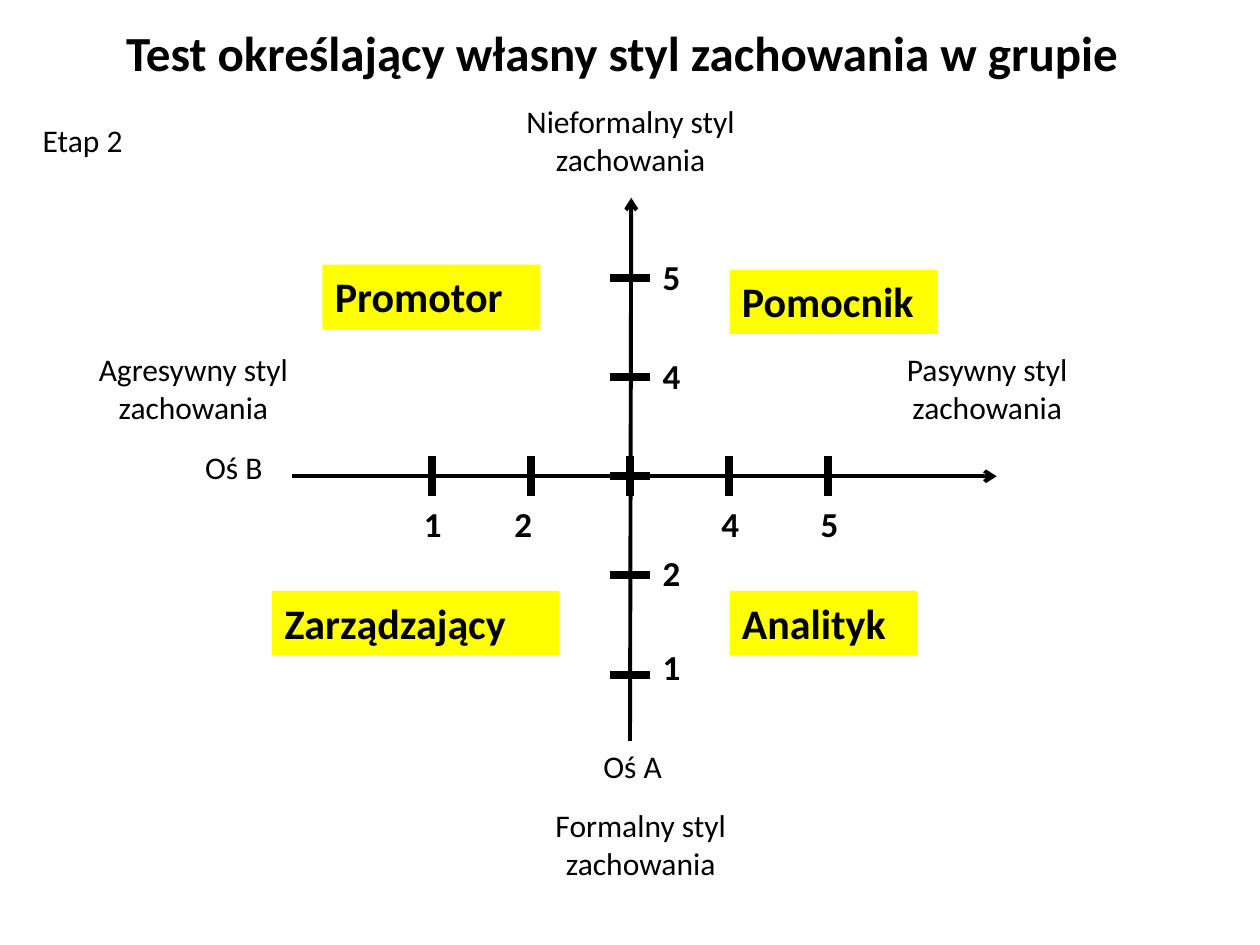
"""Build a slide with a two-axis chart of behaviour styles in a group."""
from lxml import etree
from pptx import Presentation
from pptx.dml.color import RGBColor
from pptx.enum.shapes import MSO_CONNECTOR, MSO_SHAPE
from pptx.enum.text import MSO_ANCHOR, MSO_AUTO_SIZE, PP_ALIGN
from pptx.oxml.ns import qn
from pptx.util import Inches, Pt

STRAIGHT, RECTANGLE = MSO_CONNECTOR.STRAIGHT, MSO_SHAPE.RECTANGLE
LEFT, CENTER = PP_ALIGN.LEFT, PP_ALIGN.CENTER
BLACK, YELLOW = "000000", "FFFF00"

TITLE = ("Test określający własny styl zachowania w grupie", (0.9, 0.13, 8.43, 0.57))
STYLE_SIZE = (2.05, 0.74)
STYLES = [
    ("Agresywny styl zachowania", (0.51, 2.73)),
    ("Pasywny styl zachowania", (6.81, 2.73)),
    ("Formalny styl zachowania", (4.06, 6.35)),
    ("Nieformalny styl zachowania", (3.98, 0.76)),
]
CAPTIONS = [
    ("Oś A", (4.69, 5.88, 0.94, 0.42)),
    ("Oś B", (1.53, 3.51, 0.95, 0.42)),
    ("Etap 2", (0.24, 0.91, 1.22, 0.42)),
]
ROLES = [
    ("Zarządzający", (2.16, 4.69, 2.28, 0.51)),
    ("Promotor", (2.56, 2.1, 1.73, 0.51)),
    ("Analityk", (5.79, 4.69, 1.49, 0.51)),
    ("Pomocnik", (5.79, 2.14, 1.65, 0.51)),
]
AXES = [((5, 5.88), (5.01, 1.57)), ((2.32, 3.78), (7.91, 3.78))]
ORIGIN_X, ORIGIN_Y = 5, 3.78
STEP, HALF_TICK, MIDDLE = 0.787, 0.16, 3
SCORE_SIZE = (0.39, 0.44)
SCORES_B = {1: -0.16, 2: -0.23, 4: -0.16, 5: -0.16}
SCORES_A = {1: -0.28, 2: -0.24, 4: -0.23, 5: -0.23}

CAPTION = {"size": Pt(18), "bold": False}
SCORE = {"size": Pt(20), "bold": True}
ROLE = {"size": Pt(24), "bold": True}
HEADING = {"size": Pt(28), "bold": True}
FRAME = {"word_wrap": True, "vertical_anchor": MSO_ANCHOR.TOP,
         "auto_size": MSO_AUTO_SIZE.SHAPE_TO_FIT_TEXT}


def color(value):
    return RGBColor.from_string(value)


def assign(target, values):
    for name, value in values.items():
        setattr(target, name, value)


def write(shape, wording, font_values, align=LEFT):
    frame = shape.text_frame
    frame.text = wording
    assign(frame, FRAME)
    paragraph = frame.paragraphs[0]
    paragraph.alignment = align
    font = paragraph.runs[0].font
    assign(font, {"name": "Calibri", **font_values})
    font.color.rgb = color(BLACK)


def add_label(slide, wording, box, font_values, align=LEFT):
    label = slide.shapes.add_textbox(*map(Inches, box))
    write(label, wording, font_values, align)


def add_role(slide, wording, box):
    role = slide.shapes.add_shape(RECTANGLE, *map(Inches, box))
    role.shadow.inherit = False
    role.fill.solid()
    role.fill.fore_color.rgb = color(YELLOW)
    role.line.fill.background()
    write(role, wording, ROLE)


def add_line(slide, start, end, width, arrow=False):
    line = slide.shapes.add_connector(STRAIGHT, *map(Inches, start + end))
    line.line.width = Pt(width)
    line.line.color.rgb = color(BLACK)
    properties = line._element.spPr
    if arrow:
        outline = properties.find(qn("a:ln"))
        etree.SubElement(outline, qn("a:tailEnd"), type="arrow")
    etree.SubElement(properties, qn("a:effectLst"))


def tick_x(score):
    return ORIGIN_X + (score - MIDDLE) * STEP


def tick_y(score):
    return ORIGIN_Y - (score - MIDDLE) * STEP


def add_scales(slide):
    for start, end in AXES:
        add_line(slide, start, end, 2.25, arrow=True)
    for score in range(1, 6):
        x, y = tick_x(score), tick_y(score)
        add_line(slide, (ORIGIN_X - HALF_TICK, y), (ORIGIN_X + HALF_TICK, y), 4.5)
        add_line(slide, (x, ORIGIN_Y - HALF_TICK), (x, ORIGIN_Y + HALF_TICK), 4.5)
    for score, shift in SCORES_B.items():
        place = (tick_x(score) + shift, ORIGIN_Y + HALF_TICK)
        add_label(slide, str(score), place + SCORE_SIZE, SCORE)
    for score, shift in SCORES_A.items():
        place = (ORIGIN_X + HALF_TICK, tick_y(score) + shift)
        add_label(slide, str(score), place + SCORE_SIZE, SCORE)


def main():
    deck = Presentation()
    assign(deck, {"slide_width": Inches(10), "slide_height": Inches(7.5)})
    slide = deck.slides.add_slide(deck.slide_layouts[5])
    add_scales(slide)
    for wording, box in CAPTIONS:
        add_label(slide, wording, box, CAPTION)
    for wording, place in STYLES:
        add_label(slide, wording, place + STYLE_SIZE, CAPTION, CENTER)
    for wording, box in ROLES:
        add_role(slide, wording, box)
    heading, box = TITLE
    title = slide.shapes.title
    assign(title, dict(zip(("left", "top", "width", "height"), map(Inches, box))))
    write(title, heading, HEADING)
    deck.save("out.pptx")


if __name__ == "__main__":
    main()
